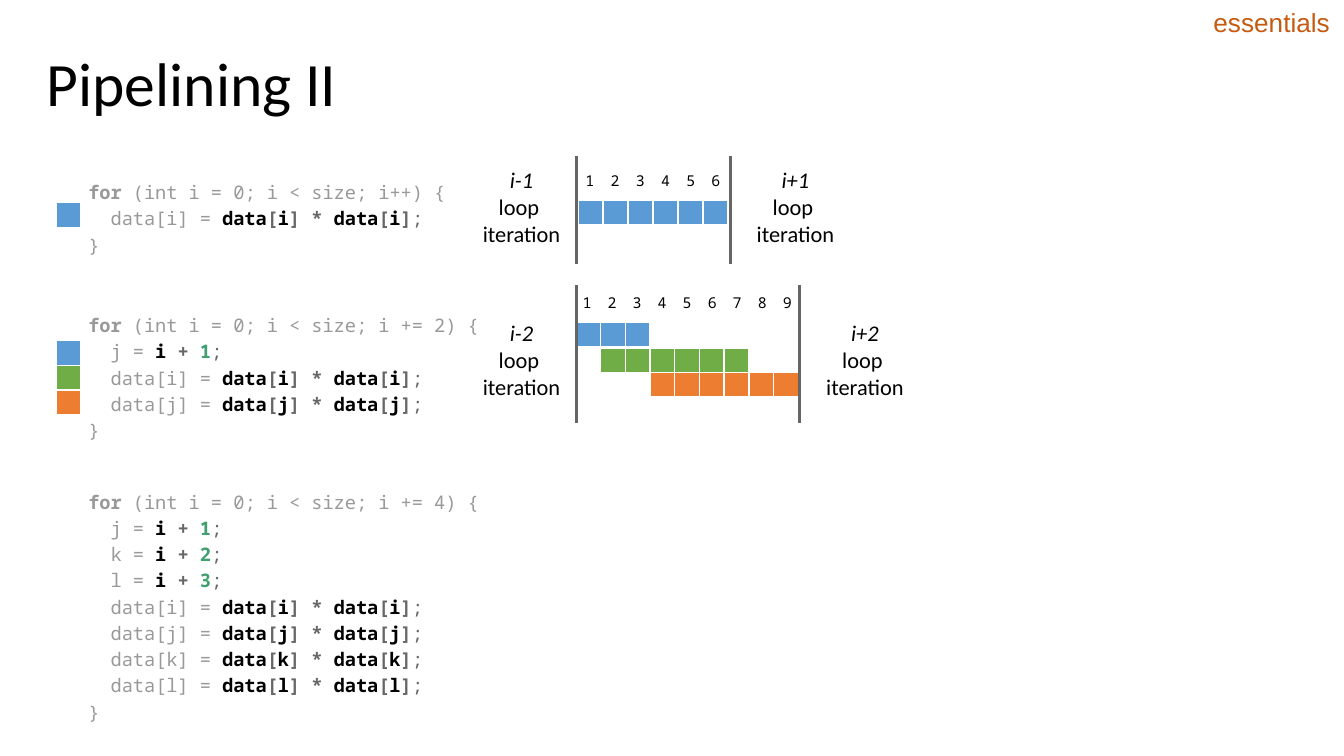
from copy import deepcopy
from dataclasses import dataclass

from lxml.etree import SubElement
from pptx import Presentation
from pptx.dml.color import RGBColor as Rgb
from pptx.enum.shapes import MSO_CONNECTOR as Connector, MSO_SHAPE as Preset
from pptx.enum.text import MSO_ANCHOR as Anchor, MSO_AUTO_SIZE as Fit, PP_ALIGN as Align
from pptx.oxml.ns import qn
from pptx.util import Pt


@dataclass(frozen=True)
class Theme:
    black: str = "000000"
    white: str = "FFFFFF"
    muted: str = "999999"
    dark: str = "666666"
    number: str = "40A070"
    blue: str = "5B9BD5"
    green: str = "70AD47"
    orange: str = "ED7D31"
    accent: str = "C65A11"
    body_font: str = "Calibri"
    code_font: str = "Noto Sans Mono"
    tag_font: str = "Arial"
    title_size: float = 33
    tag_size: float = 14
    label_size: float = 12
    code_size: float = 10
    tick_size: float = 8


THEME = Theme()
CELL = 13.25
INSET = 7.2


@dataclass(frozen=True)
class Box:
    left: float
    top: float
    width: float
    height: float


@dataclass(frozen=True)
class Span:
    text: str
    color: str = THEME.black
    bold: bool = False
    italic: bool = False


@dataclass(frozen=True)
class Listing:
    box: Box
    step: str
    offsets: str
    indices: str


@dataclass(frozen=True)
class Bar:
    color: str
    left: float
    top: float
    count: int
    pitch: float = CELL


@dataclass(frozen=True)
class Timeline:
    right: float
    top: float
    bottom: float
    ticks_left: float
    ticks_top: float
    tick_pitch: float
    tick_count: int
    label_top: float
    distance: int
    bars: tuple[Bar, ...]


LISTINGS = (
    Listing(Box(40.25, 87.75, 236, 97), "i++", "", "i"),
    Listing(Box(40.25, 159, 260, 132.5), "i += 2", "j", "ij"),
    Listing(Box(40.25, 253.5, 244, 149), "i += 4", "jkl", "ijkl"),
)
TIMELINES = (
    Timeline(391.25, 83.5, 141.25, 307.5, 90, 13.5, 6, 82, 1,
             (Bar(THEME.blue, 309.75, 107.25, 6, 13.4),)),
    Timeline(428.5, 152.75, 226.75, 306, 155.5, 13.4, 9, 163.75, 2,
             (Bar(THEME.blue, 308.5, 172.75, 3),
              Bar(THEME.green, 308.5 + CELL, 172.75 + CELL + 0.5, 6),
              Bar(THEME.orange, 308.5 + 3 * CELL, 172.75 + 2 * CELL + 0.25, 6))),
)
TIMELINE_LEFT = 309
KEYS = (
    Bar(THEME.blue, 30.25, 108.5, 1),
    Bar(THEME.blue, 30.25, 182.5, 1),
    Bar(THEME.green, 30.25, 182.5 + CELL, 1),
    Bar(THEME.orange, 30.25, 182.5 + 2 * CELL, 1),
)


def apply_format(target, values: dict) -> None:
    for name, value in values.items():
        setattr(target, name, value)


def format_frame(frame, inset: float, **values) -> None:
    sides = ("margin_left", "margin_top", "margin_right", "margin_bottom")
    apply_format(frame, {side: Pt(inset) for side in sides})
    apply_format(frame, {"word_wrap": True, **values})


def write_spans(para, spans: list[Span], font: str, size: float) -> None:
    for span in spans:
        for index, piece in enumerate(span.text.split("\n")):
            if index:
                para.add_line_break()
                para._p[-1].append(deepcopy(para.runs[-1]._r.rPr))
            if piece:
                run = para.add_run()
                run.text = piece
                apply_format(run.font, {"name": font, "size": Pt(size),
                                        "bold": span.bold, "italic": span.italic})
                run.font.color.rgb = Rgb.from_string(span.color)


def add_text(page, box: Box, spans: list[Span], font: str, size: float,
             para_format: dict | None = None, **frame_format):
    shape = page.shapes.add_textbox(Pt(box.left), Pt(box.top), Pt(box.width), Pt(box.height))
    format_frame(shape.text_frame, INSET, **frame_format)
    para = shape.text_frame.paragraphs[0]
    apply_format(para, para_format or {})
    write_spans(para, spans, font, size)
    return shape


def offset_line(name: str, offset: int) -> list[Span]:
    return [Span(f"{name} = ", THEME.muted), Span("i ", bold=True),
            Span("+ ", THEME.dark, True), Span(str(offset), THEME.number, True)]


def product_line(name: str) -> list[Span]:
    return [Span(f"data[{name}] = ", THEME.muted), Span("data", bold=True),
            Span("[", THEME.dark, True), Span(name, bold=True),
            Span("] *", THEME.dark, True), Span(" data", bold=True),
            Span("[", THEME.dark, True), Span(name, bold=True),
            Span("]", THEME.dark, True)]


def add_listing(page, listing: Listing) -> None:
    lines = [offset_line(name, offset) for offset, name in enumerate(listing.offsets, 1)]
    lines += [product_line(name) for name in listing.indices]
    spans = [Span("for", THEME.muted, True),
             Span(f" (int i = 0; i < size; {listing.step}) {{\n  ", THEME.muted)]
    for index, line in enumerate(lines, 1):
        spans += line + [Span(";\n" if index == len(lines) else ";\n  ", THEME.dark)]
    spans.append(Span("}", THEME.muted))
    add_text(page, listing.box, spans, THEME.code_font, THEME.code_size, {"line_spacing": 1.17})


def add_bar(page, bar: Bar) -> None:
    for index in range(bar.count):
        cell = page.shapes.add_shape(Preset.RECTANGLE, Pt(bar.left + index * bar.pitch),
                                     Pt(bar.top), Pt(CELL), Pt(CELL))
        cell.shadow.inherit = False
        cell.fill.solid()
        cell.fill.fore_color.rgb = Rgb.from_string(bar.color)
        cell.line.color.rgb = Rgb.from_string(THEME.white)
        cell.line.width = Pt(0.75)


def add_boundary(page, x: float, top: float, bottom: float) -> None:
    line = page.shapes.add_connector(Connector.STRAIGHT, Pt(x), Pt(top), Pt(x), Pt(bottom))
    line.line.color.rgb = Rgb.from_string(THEME.dark)
    line.line.width = Pt(1.5)
    SubElement(line._element.spPr, qn("a:effectLst"))


def add_timeline(page, timeline: Timeline) -> None:
    for bar in timeline.bars:
        add_bar(page, bar)
    for index in range(timeline.tick_count):
        box = Box(timeline.ticks_left + index * timeline.tick_pitch, timeline.ticks_top, CELL, CELL)
        add_text(page, box, [Span(str(index + 1))], THEME.code_font, THEME.tick_size,
                 vertical_anchor=Anchor.MIDDLE)
    sides = ((TIMELINE_LEFT, 240.5, "-"), (timeline.right, timeline.right - 4, "+"))
    for x, label_left, sign in sides:
        add_boundary(page, x, timeline.top, timeline.bottom)
        spans = [Span(f"i{sign}{timeline.distance}\n", italic=True), Span("loop \niteration")]
        add_text(page, Box(label_left, timeline.label_top, 77.75, 31), spans,
                 THEME.body_font, THEME.label_size, {"alignment": Align.CENTER})


def add_title(page, text: str) -> None:
    title = page.shapes.title
    apply_format(title, {"left": Pt(20), "top": Pt(0), "width": Pt(680), "height": Pt(88)})
    format_frame(title.text_frame, 5, vertical_anchor=Anchor.MIDDLE, auto_size=Fit.NONE)
    para = title.text_frame.paragraphs[0]
    para.alignment = Align.LEFT
    write_spans(para, [Span(text)], THEME.body_font, THEME.title_size)


def main() -> None:
    deck = Presentation()
    apply_format(deck, {"slide_width": Pt(720), "slide_height": Pt(405)})
    page = deck.slides.add_slide(deck.slide_layouts.get_by_name("Title Only"))
    add_title(page, "Pipelining II")
    for listing in LISTINGS:
        add_listing(page, listing)
    for key in KEYS:
        add_bar(page, key)
    for timeline in TIMELINES:
        add_timeline(page, timeline)
    tag = add_text(page, Box(643, 0, 77, 24.5), [Span("essentials", THEME.accent)],
                   THEME.tag_font, THEME.tag_size)
    format_frame(tag.text_frame, INSET, margin_top=Pt(3.6), margin_bottom=Pt(3.6),
                 word_wrap=False, auto_size=Fit.SHAPE_TO_FIT_TEXT)
    deck.save("out.pptx")


if __name__ == "__main__":
    main()
